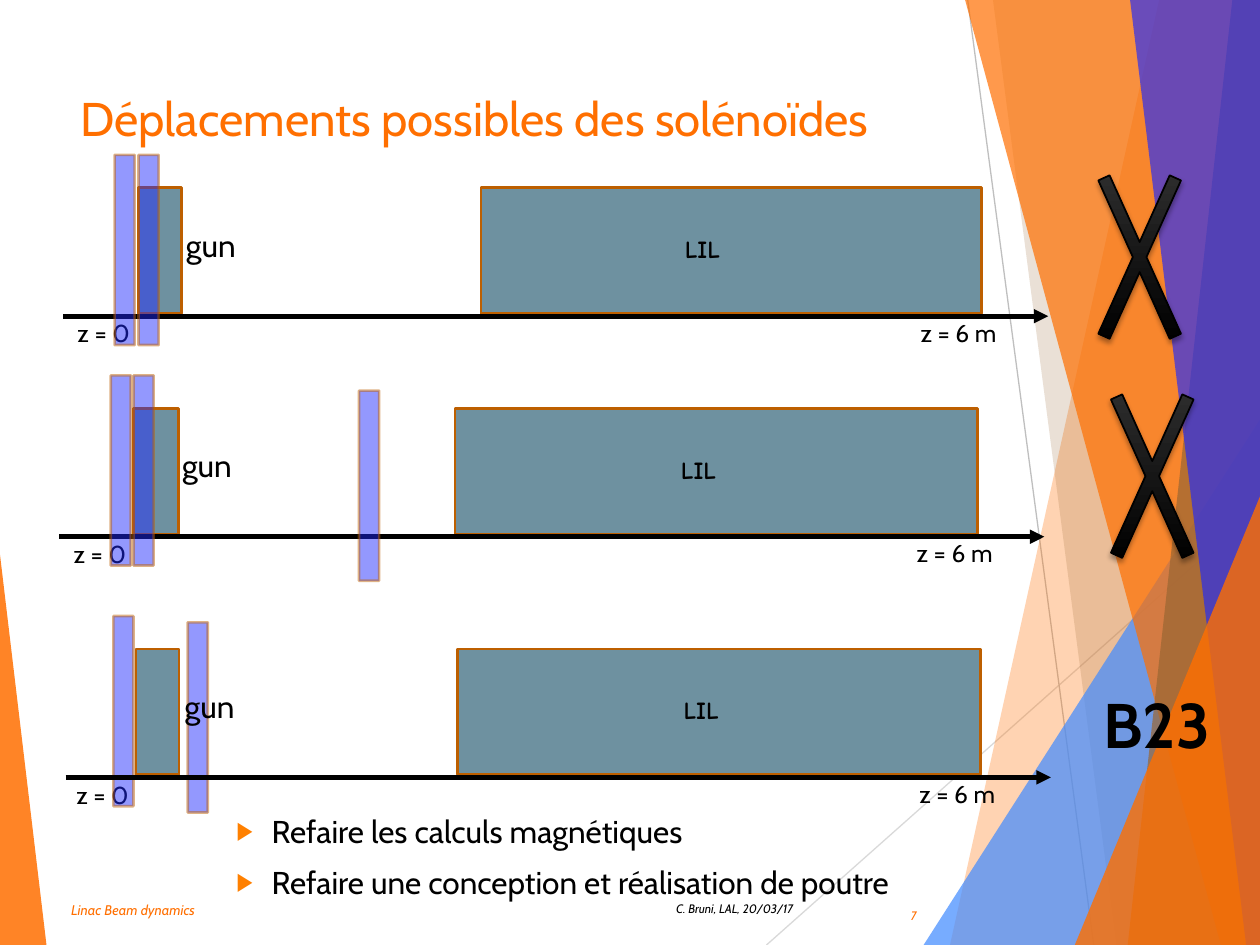
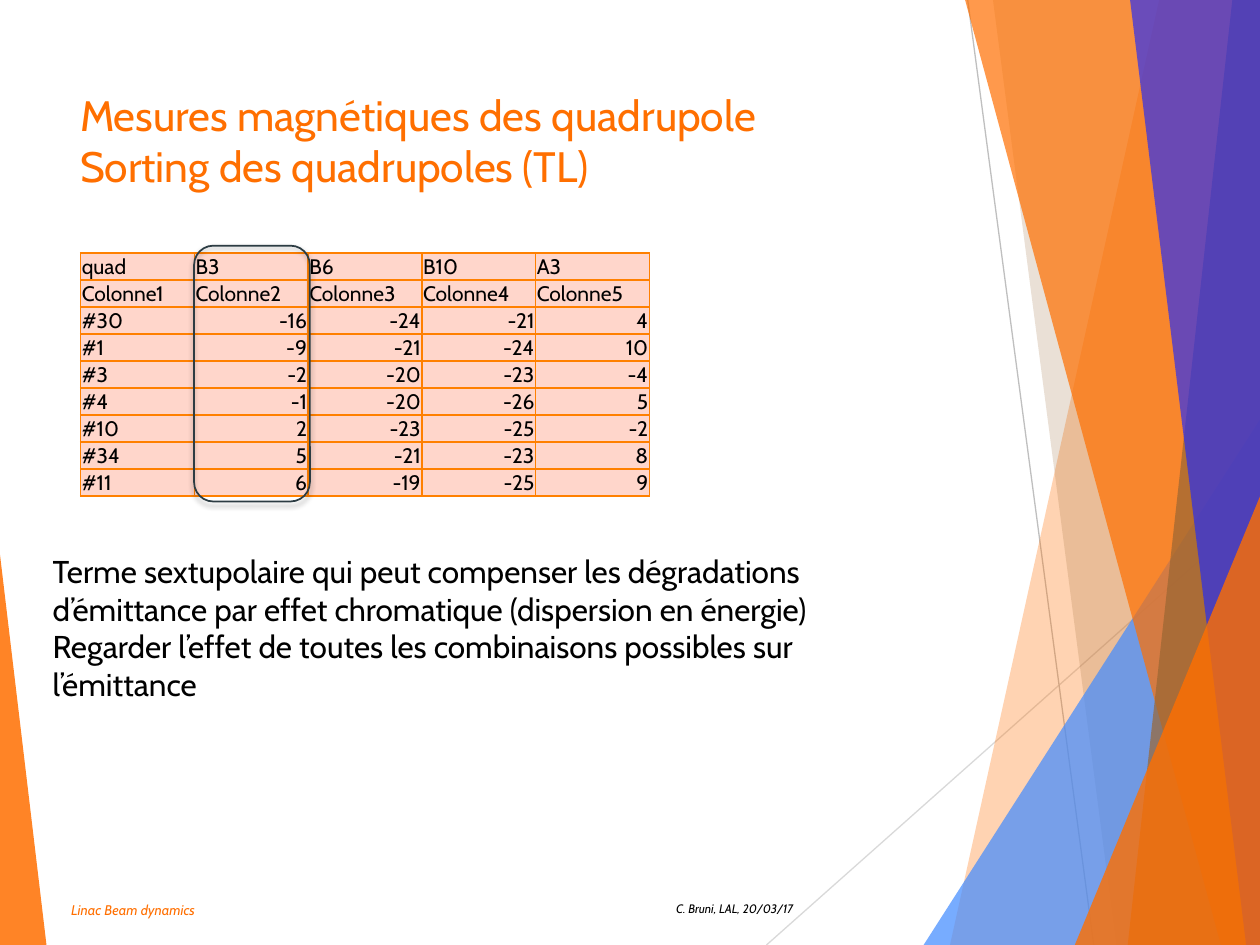
from lxml.etree import SubElement
from pptx import Presentation
from pptx.dml.color import RGBColor
from pptx.enum.shapes import MSO_CONNECTOR, MSO_SHAPE
from pptx.enum.text import MSO_ANCHOR, MSO_AUTO_SIZE, PP_ALIGN
from pptx.oxml.ns import qn
from pptx.util import Pt

COLORS = {
    "orange": "FF6F00", "bullet": "FF8000", "brown": "996633", "sky": "438CFF",
    "blue": "1F29FD", "steel": "6E91A0", "rust": "BD5F00", "black": "000000",
    "charcoal": "3F3F3F", "slate": "2C3C43", "peach": "FFD6CB",
    "pale": "D9D9D9", "silver": "BFBFBF",
}
TIGHT = (5.4, 2.7)
ROOMY = (7.2, 3.6)
RAYS = [((438, 540), (719.3, 290.2), "pale"), ((553, 0), (625, 540), "silver")]
FACETS = [
    ([(662.4, 0), (542.9, 540), (720, 540), (720, 0)], "orange", 30),
    ([(567.4, 0), (637.9, 540), (720, 540), (720, 0)], "brown", 20),
    ([(527.8, 540), (720, 239.8), (720, 540)], "sky", 72),
    ([(551.5, 0), (697.7, 540), (720, 540), (720, 0)], "orange", 70),
    ([(704.2, 0), (644.4, 540), (720, 540), (720, 0)], "brown", 70),
    ([(645.8, 0), (712.1, 540), (720, 540), (720, 0)], "blue", 65),
    ([(614.2, 540), (720, 283.7), (720, 540)], "orange", 80),
    ([(0, 316.8), (26.6, 540), (0, 540)], "orange", 85),
]
SETUPS = [
    {"origin": (36, 180.7), "gun": (43.2, 24.5), "lil": (239, 285.8),
     "solenoids": [(29.5, -92.2), (43.2, -92.2)]},
    {"origin": (33.8, 306.7), "gun": (42.5, 25.9), "lil": (226.1, 298.8),
     "solenoids": [(29.5, -92.2), (42.5, -92.2), (171.4, -83.5)]},
    {"origin": (35.3, 444.2), "gun": (42.5, 24.5), "lil": (226.1, 298.8),
     "solenoids": [(29.5, -92.2), (72, -88.6)], "axis_shift": 2.2},
]
MEASURES = [
    ("quad", "B3", "B6", "B10", "A3"),
    ("Colonne1", "Colonne2", "Colonne3", "Colonne4", "Colonne5"),
    ("#30", -16, -24, -21, 4),
    ("#1", -9, -21, -24, 10),
    ("#3", -2, -20, -23, -4),
    ("#4", -1, -20, -26, 5),
    ("#10", 2, -23, -25, -2),
    ("#34", 5, -21, -23, 8),
    ("#11", 6, -19, -25, 9),
]


class Deck:
    """Holds the shared style and the current slide, and draws each kind of element."""

    def __init__(self):
        self.presentation = Presentation()
        self.presentation.slide_width, self.presentation.slide_height = Pt(720), Pt(540)
        self.slide = None

    def rgb(self, color):
        return RGBColor.from_string(COLORS[color])

    def apply(self, target, values):
        for attribute, value in values.items():
            setattr(target, attribute, value)

    def box(self, left, top, width, height):
        return [Pt(length) for length in (left, top, width, height)]

    def new_slide(self, layout, title, width, size):
        self.slide = self.presentation.slides.add_slide(
            self.presentation.slide_layouts[layout])
        for start, end, color in RAYS:
            self.line(start, end, color, 0.75)
        for points, color, opacity in FACETS:
            self.facet(points, color, opacity)
        self.text("Linac Beam dynamics", (35.3, 512.6, 156.2, 15.1), 8,
                  color="orange", italic=True)
        self.text("C. Bruni, LAL, 20/03/17", (252.7, 512.6, 205.9, 13.7), 7,
                  align=PP_ALIGN.RIGHT, italic=True)
        self.placeholder(0, (40.3, 48.2, width, 54.7), title, size, "orange")

    def set_text(self, frame, words, size, color="black", align=PP_ALIGN.LEFT,
                 inset=TIGHT, anchor=MSO_ANCHOR.TOP, wrap=True, **look):
        side, edge = (Pt(length) for length in inset)
        frame.text = words
        self.apply(frame, {
            "margin_left": side, "margin_right": side, "margin_top": edge,
            "margin_bottom": edge, "vertical_anchor": anchor, "word_wrap": wrap,
            "auto_size": MSO_AUTO_SIZE.NONE})
        for paragraph in frame.paragraphs:
            paragraph.alignment = align
            self.style_runs(paragraph, size, color, **look)

    def style_runs(self, paragraph, size, color="black", **look):
        for run in paragraph.runs:
            self.apply(run.font, {"name": "Cabin", "size": Pt(size), **look})
            run.font.color.rgb = self.rgb(color)

    def text(self, words, place, size, **style):
        self.set_text(self.slide.shapes.add_textbox(*self.box(*place)).text_frame,
                      words, size, **style)

    def placeholder(self, index, place, words, size, color="black"):
        holder = self.slide.placeholders[index]
        self.apply(holder, dict(zip(("left", "top", "width", "height"), self.box(*place))))
        holder.element.getparent().append(holder.element)
        self.set_text(holder.text_frame, words, size, color)
        return holder.text_frame

    def bullets(self, place, items):
        frame = self.placeholder(1, place, "\n".join(items), 18)
        for number, paragraph in enumerate(frame.paragraphs):
            properties = paragraph._p.get_or_add_pPr()
            properties.set("marL", str(Pt(20.2)))
            properties.set("indent", str(-Pt(20.2)))
            tint = SubElement(properties, qn("a:buClr"))
            SubElement(tint, qn("a:srgbClr"), val=COLORS["bullet"])
            SubElement(properties, qn("a:buSzPct"), val="80000")
            SubElement(properties, qn("a:buChar"), char="▶")
            paragraph.space_before = Pt(7.5 if number else 0)

    def fade(self, fill, color, opacity):
        fill.solid()
        fill.fore_color.rgb = self.rgb(color)
        if opacity < 100:
            for tint in fill._xPr.iter(qn("a:srgbClr")):
                SubElement(tint, qn("a:alpha"), val=str(opacity * 1000))

    def line(self, start, end, color, width, arrow=False):
        ends = [Pt(length) for length in (*start, *end)]
        line = self.slide.shapes.add_connector(MSO_CONNECTOR.STRAIGHT, *ends)
        line.line.color.rgb = self.rgb(color)
        line.line.width = Pt(width)
        if arrow:
            SubElement(line.line._get_or_add_ln(), qn("a:tailEnd"), type="triangle")
        SubElement(line._element.spPr, qn("a:effectLst"))

    def facet(self, points, color, opacity):
        (left, top), *others = [(Pt(x), Pt(y)) for x, y in points]
        builder = self.slide.shapes.build_freeform(left, top)
        builder.add_line_segments(others, close=True)
        facet = builder.convert_to_shape()
        facet.shadow.inherit = False
        self.fade(facet.fill, color, opacity)
        facet.line.fill.background()

    def shape(self, kind, place, outline, width, shadow=False):
        shape = self.slide.shapes.add_shape(kind, *self.box(*place))
        shape.shadow.inherit = False
        shape.line.color.rgb = self.rgb(outline)
        shape.line.width = Pt(width)
        if shadow:
            effects = shape._element.spPr.find(qn("a:effectLst"))
            outer = SubElement(effects, qn("a:outerShdw"), blurRad=str(Pt(3)),
                               dist=str(Pt(2)), dir="5400000", rotWithShape="0")
            tint = SubElement(outer, qn("a:srgbClr"), val=COLORS["black"])
            SubElement(tint, qn("a:alpha"), val="35000")
        return shape

    def block(self, place, color, opacity=100):
        block = self.shape(MSO_SHAPE.RECTANGLE, place, "rust", 1.5)
        self.fade(block.fill, color, opacity)

    def cross(self, left, top):
        cross = self.shape(MSO_SHAPE.MATH_MULTIPLY, (left, top, 78.5, 174.2),
                           "black", 1, shadow=True)
        cross.adjustments[0] = 0.09
        cross.fill.gradient()
        cross.fill.gradient_angle = 270
        stops = zip(cross.fill.gradient_stops, (("charcoal", 0), ("black", 0.78)))
        for stop, (color, position) in stops:
            stop.color.rgb = self.rgb(color)
            stop.position = position

    def highlight(self, place):
        self.shape(MSO_SHAPE.ROUNDED_RECTANGLE, place, "slate", 1,
                   shadow=True).fill.background()

    def beamline(self, origin, gun, lil, solenoids, axis_shift=0):
        x, y = origin
        start = x + axis_shift
        axis = ((start, y), (start + 563, y), "black", 2.75, True)
        for offset, width in (gun, lil):
            self.block((x + offset, y - 73.4, width, 72), "steel")
        if not axis_shift:
            self.line(*axis)
        self.text("z = 0", (x + 2.9, y - 1.4, 41, 22.3), 14, wrap=False)
        self.text("z = 6 m", (x + 484.6, y - 1.8, 56.9, 22.3), 14, wrap=False)
        for dx, dy in solenoids:
            self.block((x + dx, y + dy, 11.5, 108.7), "blue", 48)
        self.text("LIL", (x + 349.9, y - 49.5, 34.6, 22.3), 14, wrap=False,
                  name="Comic Neue", bold=True)
        self.text("gun", (x + 64.8, y - 54.3, 39.6, 27.4), 18, wrap=False)
        if axis_shift:
            self.line(*axis)

    def table(self, place, rows):
        left, top, width, height = self.box(*place)
        table = self.slide.shapes.add_table(
            len(rows), len(rows[0]), left, top, width, height).table
        self.apply(table, {"first_row": False, "horz_banding": False})
        for row, values in zip(table.rows, rows):
            for cell, value in zip(row.cells, values):
                self.cell(cell, value)

    def cell(self, cell, value):
        cell.text = str(value)
        self.apply(cell, {
            "margin_left": Pt(0.7), "margin_right": Pt(0.7), "margin_top": Pt(0.7),
            "margin_bottom": Pt(0), "vertical_anchor": MSO_ANCHOR.BOTTOM})
        paragraph = cell.text_frame.paragraphs[0]
        paragraph.alignment = PP_ALIGN.RIGHT if isinstance(value, int) else PP_ALIGN.LEFT
        self.style_runs(paragraph, 12)
        properties = cell._tc.get_or_add_tcPr()
        for side in "LRTB":
            border = SubElement(properties, qn(f"a:ln{side}"), w=str(Pt(1)))
            fill = SubElement(border, qn("a:solidFill"))
            SubElement(fill, qn("a:srgbClr"), val=COLORS["bullet"])
        cell.fill.solid()
        cell.fill.fore_color.rgb = self.rgb("peach")


def main():
    deck = Deck()

    deck.new_slide(1, "Déplacements possibles des solénoïdes", 557.3, 27)
    deck.text("7", (496.1, 511.2, 33.1, 24.5), 7, color="orange", italic=True,
              align=PP_ALIGN.RIGHT, anchor=MSO_ANCHOR.MIDDLE)
    for setup in SETUPS:
        deck.beamline(**setup)
    for left, top in ((612, 59.8), (619.2, 185)):
        deck.cross(left, top)
    deck.bullets((129.6, 461.5, 507.6, 63.4), [
        "Refaire les calculs magnétiques",
        "Refaire une conception et réalisation de poutre"])
    deck.text("B23", (623.5, 388.1, 81.4, 51.1), 36, inset=ROOMY, bold=True)

    deck.new_slide(5, "Mesures magnétiques des quadrupole\vSorting des quadrupoles (TL)",
                   507.6, 24.3)
    deck.table((46.1, 144.7, 325, 139), MEASURES)
    deck.text("Terme sextupolaire qui peut compenser les dégradations d’émittance "
              "par effet chromatique (dispersion en énergie)\n"
              "Regarder l’effet de toutes les combinaisons possibles sur l’émittance",
              (23, 311.8, 466.6, 116.6), 18, inset=ROOMY)
    deck.highlight((110.9, 140.4, 66.2, 146.2))

    deck.presentation.save("out.pptx")


if __name__ == "__main__":
    main()
